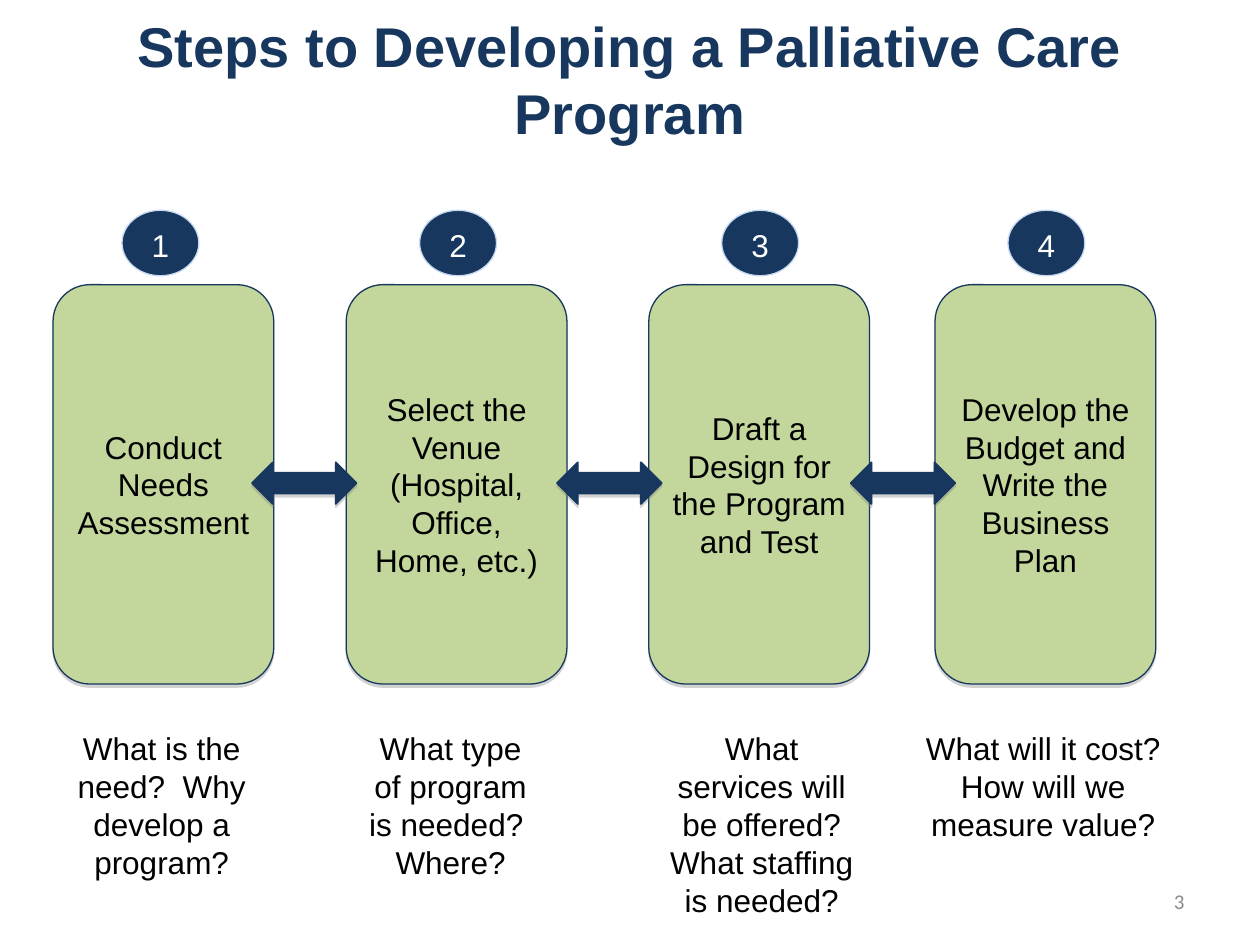
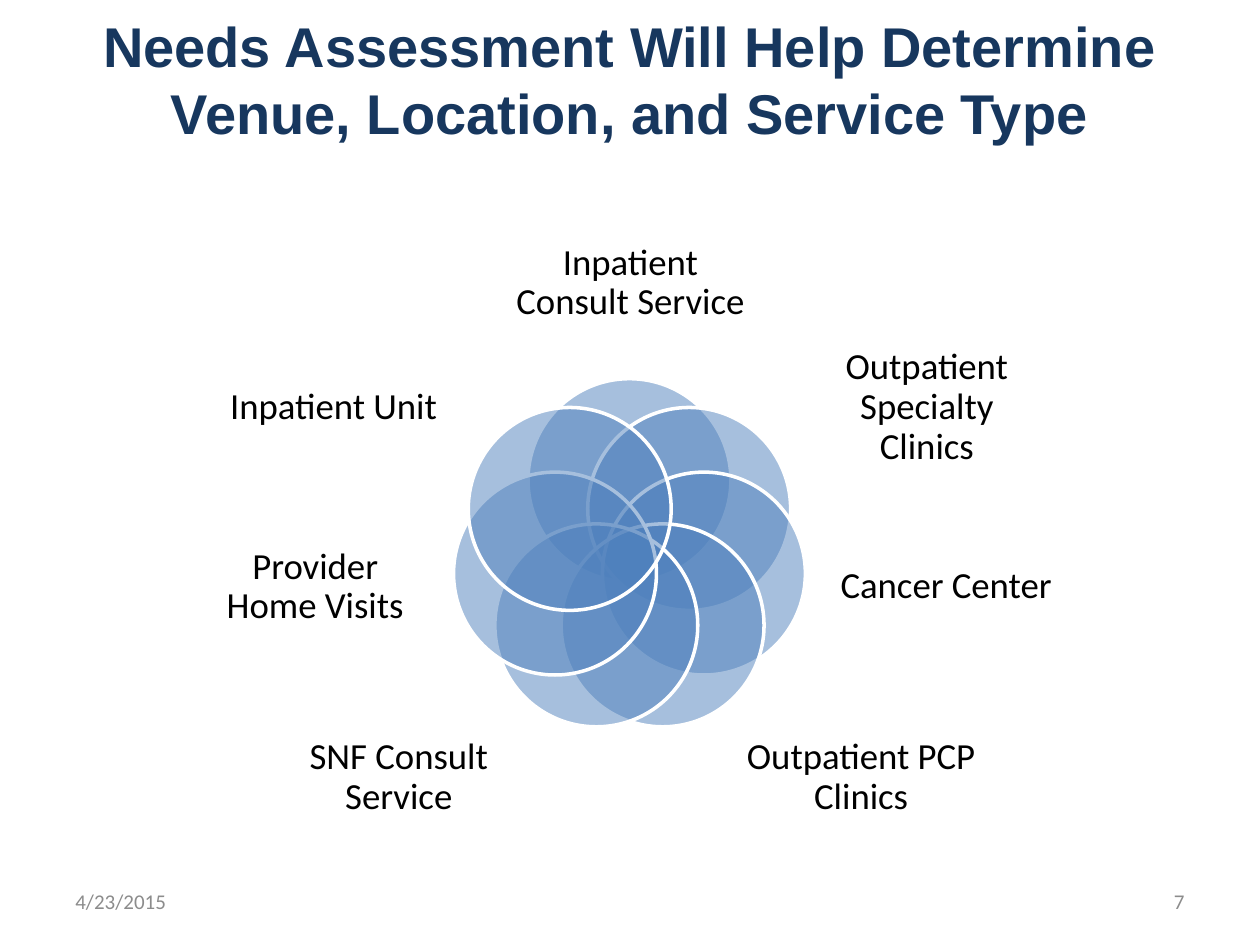
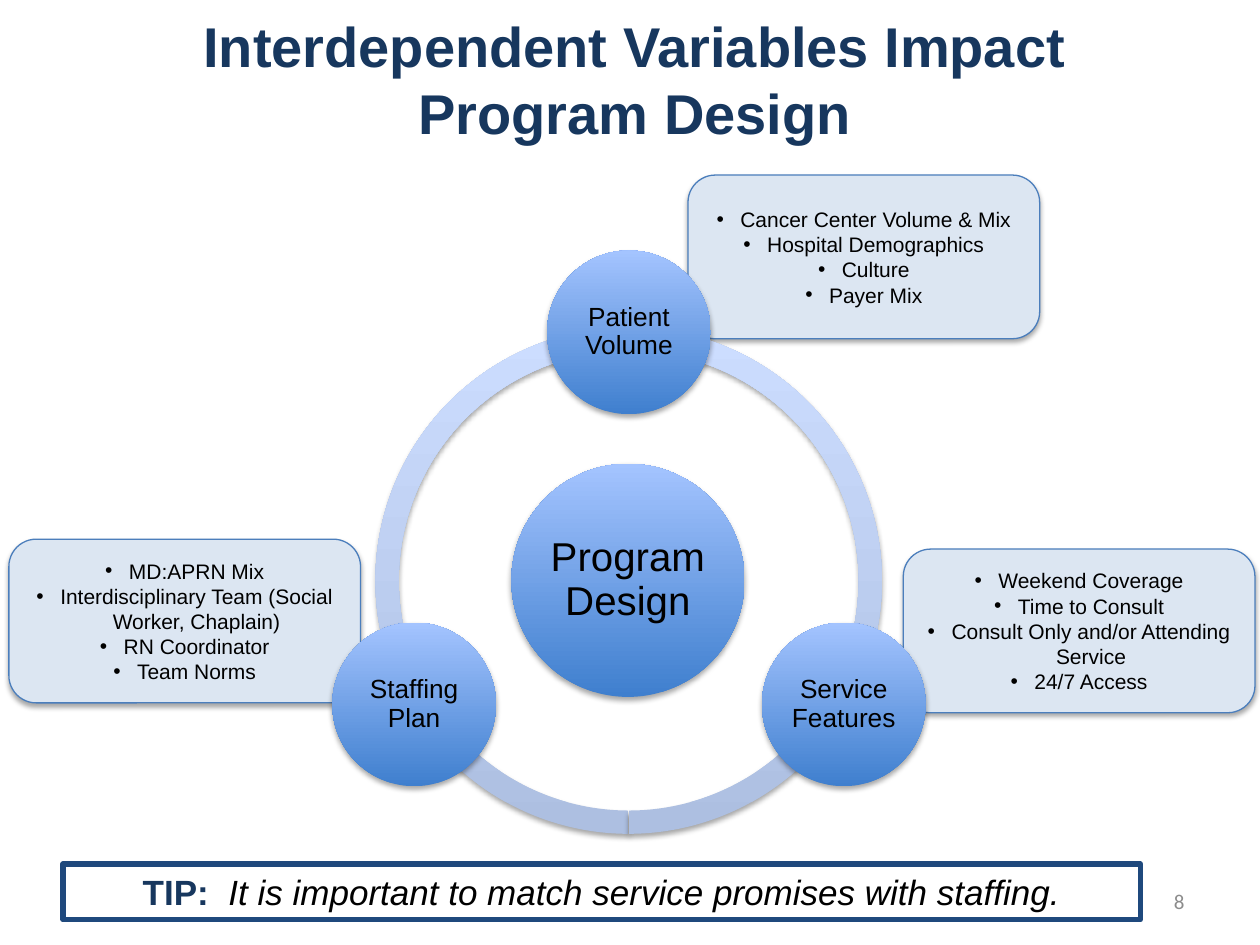
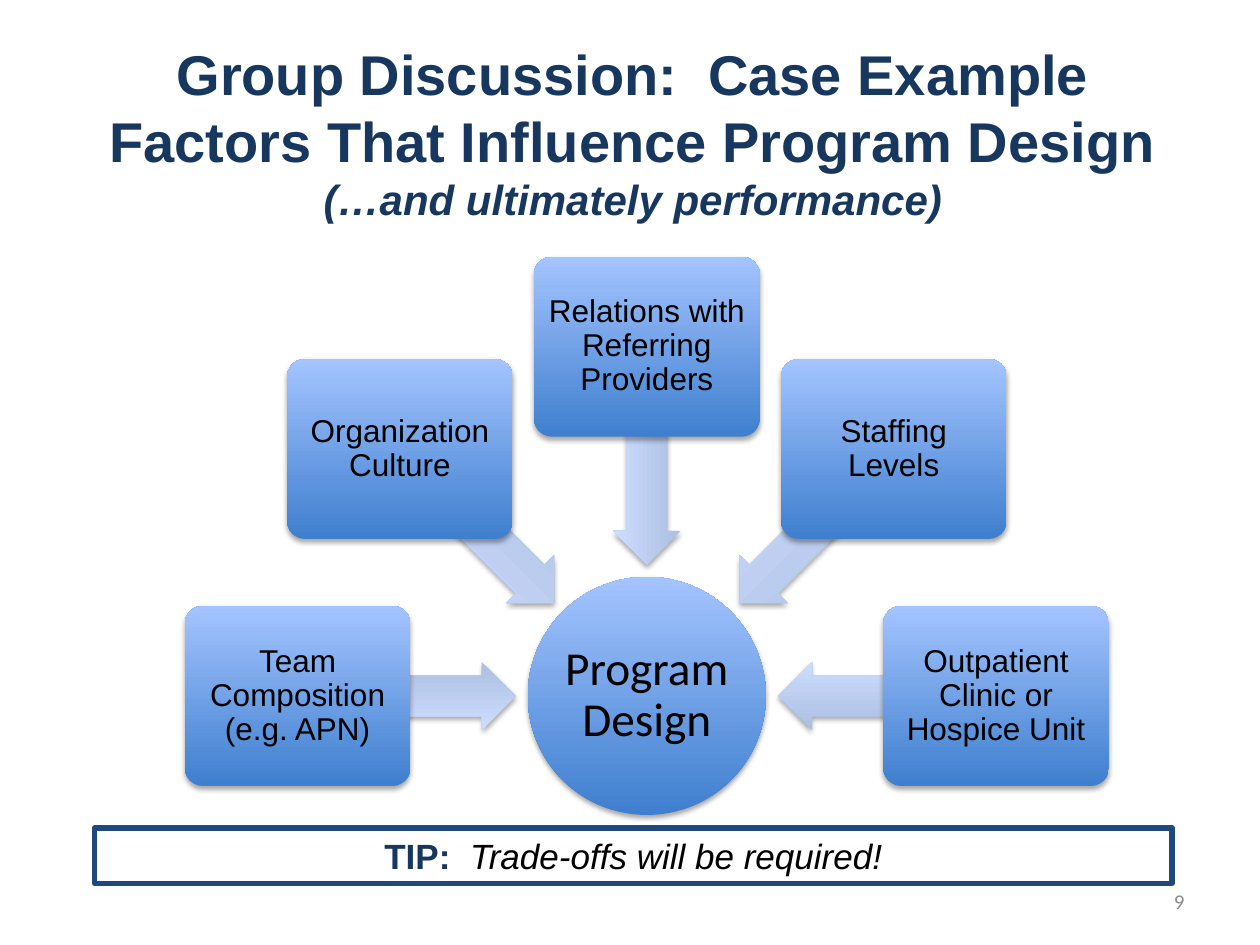
"""Build four slides on planning a palliative care program."""
from math import cos, radians, sin

from lxml import etree
from pptx import Presentation
from pptx.dml.color import RGBColor
from pptx.enum.shapes import MSO_SHAPE
from pptx.enum.text import MSO_ANCHOR, PP_ALIGN
from pptx.oxml.ns import qn
from pptx.util import Cm, Pt

ELLIPSE = MSO_SHAPE.OVAL
ROUNDED = MSO_SHAPE.ROUNDED_RECTANGLE
RECTANGLE = MSO_SHAPE.RECTANGLE
ARC = MSO_SHAPE.BLOCK_ARC
LEFT_ARROW = MSO_SHAPE.LEFT_ARROW
TWO_WAY_ARROW = MSO_SHAPE.LEFT_RIGHT_ARROW
TOP, MIDDLE = MSO_ANCHOR.TOP, MSO_ANCHOR.MIDDLE
LEFT, CENTER, RIGHT = PP_ALIGN.LEFT, PP_ALIGN.CENTER, PP_ALIGN.RIGHT

COLORS = {
    "navy": "17375E", "border": "1F497D", "ice": "C6D9F1", "green": "C3D69B",
    "petal": "4F81BD", "pale": "DCE6F2", "steel": "4B7EBC", "gray": "8C8C8C",
    "black": "000000", "white": "FFFFFF", "shade": "808080",
    "deep": "3F7FCE", "sky": "A4C4FF", "mist": "ADBFE1", "haze": "CCDDFF",
}
VIVID, SOFT = ("deep", "sky"), ("mist", "haze")
SHARP_SHADOW, BLURRED_SHADOW = ("shade", 0), ("black", 3.1)


def draw(page, preset, at, fill=None, line=None, shadow=None, alpha=None):
    """Add a preset shape at (left, top, width, height) in centimetres."""
    box = page.shapes.add_shape(preset, *[Cm(length) for length in at])
    if isinstance(fill, tuple):
        box.fill.gradient()
        box.fill.gradient_angle = 90
        for stop, name in zip(box.fill.gradient_stops, fill):
            stop.color.rgb = RGBColor.from_string(COLORS[name])
    elif fill:
        box.fill.solid()
        box.fill.fore_color.rgb = RGBColor.from_string(COLORS[fill])
    else:
        box.fill.background()
    if alpha:
        tint = box.element.spPr.find(qn("a:solidFill"))[0]
        etree.SubElement(tint, qn("a:alpha"), val=str(alpha * 1000))
    if line:
        name, width = line
        box.line.color.rgb = RGBColor.from_string(COLORS[name])
        box.line.width = Pt(width)
    else:
        box.line.fill.background()
    box.shadow.inherit = False
    if shadow:
        name, blur = shadow
        effects = box.element.spPr.find(qn("a:effectLst"))
        outer = etree.SubElement(effects, qn("a:outerShdw"), blurRad=str(Pt(blur)),
                                 dist=str(Pt(1.8)), dir="5400000", rotWithShape="0")
        tint = etree.SubElement(outer, qn("a:srgbClr"), val=COLORS[name])
        etree.SubElement(tint, qn("a:alpha"), val="35000")
    return box


def write(box, lines, size, color="black", font="Arial", bold=False, align=CENTER,
          anchor=MIDDLE, inset=None, spacing=None, bullet=False):
    """Fill a box with paragraphs, each a string or a list of (text, style) spans."""
    frame = box.text_frame
    frame.word_wrap = True
    frame.vertical_anchor = anchor
    if inset is not None:
        frame.margin_left = frame.margin_right = Cm(inset)
        frame.margin_top = frame.margin_bottom = Cm(inset)
    for index, line in enumerate(lines):
        para = frame.add_paragraph() if index else frame.paragraphs[0]
        para.alignment = align
        if spacing:
            para.line_spacing = spacing
        if bullet:
            layout = para._p.get_or_add_pPr()
            layout.set("marL", str(Cm(0.48)))
            layout.set("indent", str(Cm(-0.48)))
            etree.SubElement(layout, qn("a:buFont"), typeface="Arial")
            etree.SubElement(layout, qn("a:buChar"), char="•")
        for text, style in [(line, {})] if isinstance(line, str) else line:
            if text == "\n":
                para.add_line_break()
                continue
            span = para.add_run()
            span.text = text
            span.font.name = font
            span.font.size = Pt(style.get("size", size))
            span.font.bold = style.get("bold", bold)
            span.font.italic = style.get("italic", False)
            span.font.color.rgb = RGBColor.from_string(COLORS[style.get("color", color)])


deck = Presentation()
deck.slide_width, deck.slide_height = Cm(25.4), Cm(19.05)

titles = [
    ((1.27, 0, 22.86, 3.18), "3", "Steps to Developing a Palliative Care Program"),
    ((1.27, 0, 22.86, 3.18), "7",
     "Needs Assessment Will Help Determine Venue, Location, and Service Type"),
    ((1.47, 0, 22.66, 3.18), "8", "Interdependent Variables Impact Program Design"),
    ((0.71, 0, 24.1, 5.31), "9", [
        ("Group Discussion:  Case Example", {}), ("\n", {}),
        ("Factors That Influence Program Design", {}), ("\n", {}),
        ("(…and ultimately performance)", {"size": 24, "italic": True})]),
]
pages = []
for at, number, title in titles:
    page = deck.slides.add_slide(deck.slide_layouts[6])
    pages.append(page)
    write(page.shapes.add_textbox(*[Cm(length) for length in at]), [title], 32,
          "navy", bold=True)
    write(page.shapes.add_textbox(Cm(18.21), Cm(17.65), Cm(5.92), Cm(1.02)), [number], 12,
          "gray", "Calibri", align=RIGHT)
steps_page, needs_page, variables_page, factors_page = pages

steps = [
    (1.07, 2.46, "Conduct Needs Assessment",
     (1.14, 4.24, 3.33), ["What is the need?  Why develop a program?"]),
    (6.98, 8.46, "Select the Venue (Hospital, Office, Home, etc.)",
     (7.09, 3.99, 3.33), ["What type of program is needed?  Where?"]),
    (13.08, 14.55, "Draft a Design for the Program and Test",
     (13.13, 4.45, 4.11), ["What services will be offered? What staffing is needed?"]),
    (18.85, 20.32, "Develop the Budget and Write the Business Plan",
     (18.39, 5.28, 2.57), ["What will it cost?", "How will we measure value?"]),
]
for number, (card_left, badge_left, step, question_place, questions) in enumerate(steps, 1):
    card = draw(steps_page, ROUNDED, (card_left, 5.74, 4.45, 8.05), "green",
                ("navy", 0.75), SHARP_SHADOW)
    write(card, [step], 18)
    badge = draw(steps_page, ELLIPSE, (badge_left, 4.24, 1.55, 1.32), "navy", ("ice", 0.75))
    write(badge, [str(number)], 18, "white", anchor=TOP)
    left, width, height = question_place
    question = steps_page.shapes.add_textbox(Cm(left), Cm(14.58), Cm(width), Cm(height))
    write(question, questions, 18, anchor=TOP)
for left in (5.08, 11.23, 17.15):
    draw(steps_page, TWO_WAY_ARROW, (left, 9.32, 2.11, 0.84), "navy", ("navy", 1),
         SHARP_SHADOW)

services = [
    ("Inpatient Consult Service", (10.36, 4.45, 4.7, 2.51)),
    ("Outpatient Specialty Clinics", (16.46, 6.83, 4.45, 2.77)),
    ("Cancer Center", (16.89, 10.36, 4.37, 2.95)),
    ("Outpatient PCP Clinics", (15.01, 14.33, 4.7, 2.69)),
    ("SNF Consult Service", (5.69, 14.33, 4.7, 2.69)),
    ("Provider Home Visits", (4.17, 10.36, 4.37, 2.95)),
    ("Inpatient Unit", (4.5, 6.83, 4.45, 2.77)),
]
petal_size = 4.09
for index, (service, at) in enumerate(services):
    angle = radians(index * 360 / len(services))
    petal_left = 12.69 + 1.54 * sin(angle) - petal_size / 2
    petal_top = 11.22 - 1.54 * cos(angle) - petal_size / 2
    draw(needs_page, ELLIPSE, (petal_left, petal_top, petal_size, petal_size), "petal",
         ("white", 2), alpha=50)
    label = needs_page.shapes.add_textbox(*[Cm(length) for length in at])
    write(label, [service], 21, font="Calibri", inset=0, spacing=0.9)
date = needs_page.shapes.add_textbox(Cm(1.27), Cm(17.65), Cm(5.92), Cm(1.02))
write(date, ["4/23/2015"], 12, "gray", "Calibri", align=LEFT)

details = [
    (18.21, 11.07, ["Weekend Coverage", "Time to Consult",
                    "Consult Only and/or Attending Service", "24/7 Access"]),
    (0.18, 10.87, ["MD:APRN Mix", "Interdisciplinary Team (Social Worker, Chaplain)",
                   "RN Coordinator", "Team Norms"]),
    (13.87, 3.53, ["Cancer Center Volume & Mix", "Hospital Demographics", "Culture",
                   "Payer Mix"]),
]
for left, top, points in details:
    card = draw(variables_page, ROUNDED, (left, top, 7.09, 3.3), "pale", ("steel", 0.75),
                BLURRED_SHADOW)
    write(card, points, 12, bullet=True)
for start, end in ((90, 162), (18, 90), (162, 18)):
    arc = draw(variables_page, ARC, (7.57, 6.6, 10.21, 10.21), SOFT, shadow=BLURRED_SHADOW)
    arc.adjustments[0] = start * 0.6
    arc.adjustments[1] = end * 0.6
    arc.adjustments[2] = 0.046
hub = draw(variables_page, ELLIPSE, (10.31, 9.35, 4.7, 4.7), VIVID, shadow=BLURRED_SHADOW)
write(hub, ["Program Design"], 23, inset=0.08, spacing=0.9)
node_size = 3.3
for index, variable in enumerate(("Patient Volume", "Service Features", "Staffing Plan")):
    angle = radians(index * 120)
    node_left = 12.68 + 5 * sin(angle) - node_size / 2
    node_top = 11.7 - 5 * cos(angle) - node_size / 2
    node = draw(variables_page, ELLIPSE, (node_left, node_top, node_size, node_size), VIVID,
                shadow=BLURRED_SHADOW)
    write(node, [variable], 15, inset=0.05, spacing=0.9)

hub_x, hub_y = 13.04, 14.03
hub = draw(factors_page, ELLIPSE, (hub_x - 2.4, hub_y - 2.4, 4.8, 4.8), VIVID,
           shadow=BLURRED_SHADOW)
write(hub, ["Program Design"], 27, font="Calibri", inset=0.05, spacing=0.9)
factors = ["Team Composition (e.g. APN)", "Organization Culture",
           "Relations with Referring Providers", "Staffing Levels",
           "Outpatient Clinic or Hospice Unit"]
arrow_width, arrow_height = 4.39, 1.37
card_width, card_height = 4.55, 3.63
for index, factor in enumerate(factors):
    degrees = 180 - index * 45
    across, up = cos(radians(degrees)), sin(radians(degrees))
    arrow = draw(factors_page, LEFT_ARROW,
                 (hub_x + 4.84 * across - arrow_width / 2,
                  hub_y - 4.84 * up - arrow_height / 2, arrow_width, arrow_height),
                 SOFT, shadow=BLURRED_SHADOW)
    arrow.adjustments[0] = 0.6
    arrow.rotation = -degrees % 360
    card = draw(factors_page, ROUNDED,
                (hub_x + 7.04 * across - card_width / 2,
                 hub_y - 7.04 * up - card_height / 2, card_width, card_height),
                VIVID, shadow=BLURRED_SHADOW)
    card.adjustments[0] = 0.1
    write(card, [factor], 18, inset=0.12, spacing=0.9)

tips = [
    (variables_page, 1.27, 17.42, "It is important to match service promises with staffing."),
    (factors_page, 1.91, 16.69, "Trade-offs will be required!"),
]
for page, left, top, tip in tips:
    banner = draw(page, RECTANGLE, (left, top, 21.72, 1.12), line=("border", 3))
    write(banner, [[("TIP:  ", {"color": "navy", "bold": True}), (tip, {"italic": True})]],
          20, anchor=TOP)

deck.save("out.pptx")
